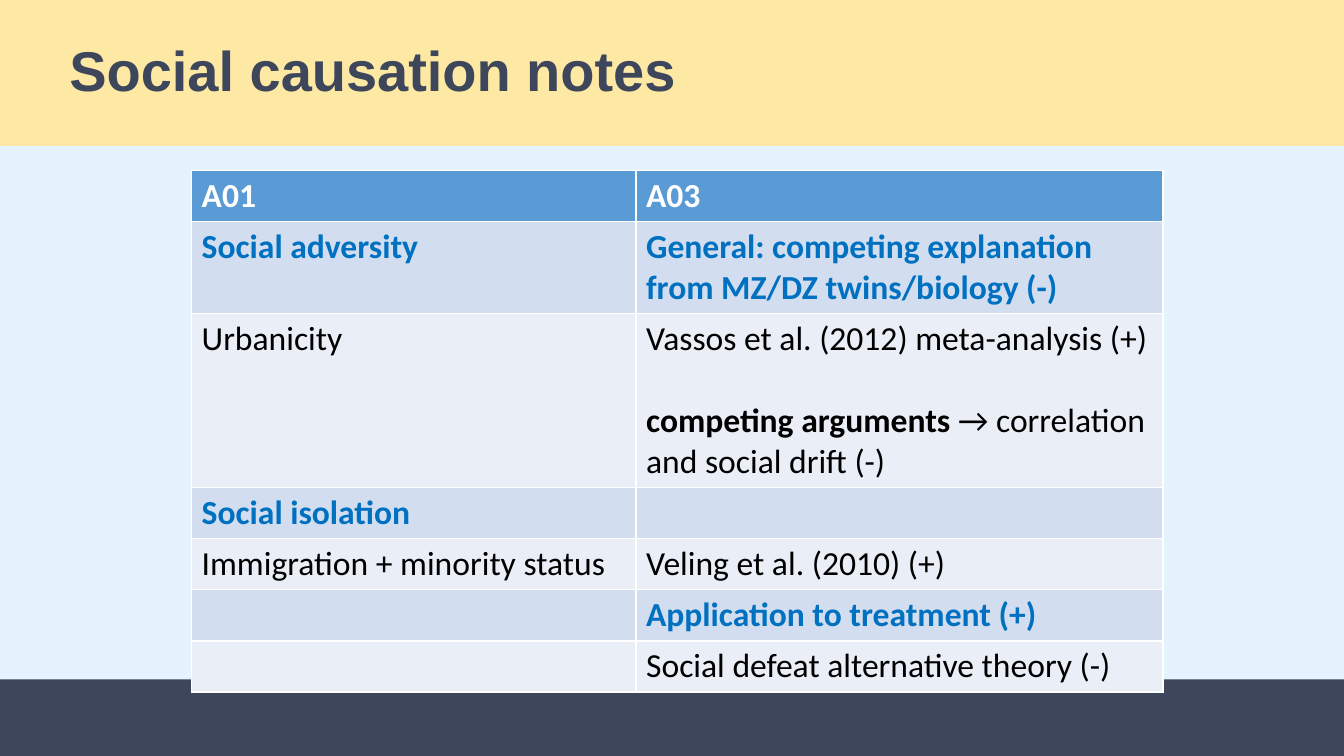
from dataclasses import dataclass

import pptx
import pptx.dml.color
import pptx.enum.shapes
import pptx.enum.text
import pptx.util
from pptx.dml.color import RGBColor
from pptx.util import Cm, Pt

NAVY = RGBColor(0x3D, 0x46, 0x5A)
CREAM = RGBColor(0xFE, 0xE9, 0xA4)
PALE_BLUE = RGBColor(0xE5, 0xF3, 0xFF)
HEADER_BLUE = RGBColor(0x5B, 0x9B, 0xD5)
BANDS = (RGBColor(0xD2, 0xDE, 0xEF), RGBColor(0xEA, 0xEF, 0xF7))
TOPIC_BLUE = RGBColor(0x00, 0x70, 0xC0)
WHITE = RGBColor(0xFF, 0xFF, 0xFF)
BLACK = RGBColor(0x00, 0x00, 0x00)

SLIDE_WIDTH = Cm(33.87)
SLIDE_HEIGHT = Cm(19.05)
COLUMN_WIDTHS = (11.2, 13.28)


@dataclass(frozen=True)
class Note:
    text: str
    bold_lead: str = ""
    space_before: float = 0


@dataclass(frozen=True)
class NoteRow:
    height: float
    a01: tuple[Note, ...]
    a03: tuple[Note, ...]
    color: RGBColor = BLACK
    bold: bool = False


NOTE_ROWS = (
    NoteRow(1.2, (Note("A01"),), (Note("A03"),), WHITE, True),
    NoteRow(2.08, (Note("Social adversity"),),
            (Note("General: competing explanation from MZ/DZ twins/biology (-)"),),
            TOPIC_BLUE, True),
    NoteRow(3.86, (Note("Urbanicity"),),
            (Note("Vassos et al. (2012) meta-analysis (+)"),
             Note("→ correlation and social drift (-)", "competing arguments ", 29.3))),
    NoteRow(1.2, (Note("Social isolation"),), (), TOPIC_BLUE, True),
    NoteRow(1.2, (Note("Immigration + minority status"),),
            (Note("Veling et al. (2010) (+)"),)),
    NoteRow(1.2, (), (Note("Application to treatment (+)"),), TOPIC_BLUE, True),
    NoteRow(1.2, (), (Note("Social defeat alternative theory (-)"),)),
)


def add_band(slide: pptx.slide.Slide, top: float, height: float,
             color: RGBColor) -> pptx.shapes.autoshape.Shape:
    band = slide.shapes.add_shape(
        pptx.enum.shapes.MSO_SHAPE.RECTANGLE, 0, Cm(top), SLIDE_WIDTH, Cm(height))
    band.shadow.inherit = False
    band.fill.solid()
    band.fill.fore_color.rgb = color
    band.line.fill.background()
    return band


def add_title(slide: pptx.slide.Slide, text: str) -> None:
    frame = add_band(slide, 0, 3.68, CREAM).text_frame
    frame.word_wrap = True
    frame.margin_left = Cm(1.75)
    frame.vertical_anchor = pptx.enum.text.MSO_ANCHOR.MIDDLE
    title = frame.paragraphs[0]
    title.text = text
    title.alignment = pptx.enum.text.PP_ALIGN.LEFT
    title.line_spacing = 0.9
    title.font.name = "Arial"
    title.font.size = Pt(40)
    title.font.bold = True
    title.font.color.rgb = NAVY


def fill_cell(cell: pptx.table._Cell, notes: tuple[Note, ...],
              row: NoteRow, background: RGBColor) -> None:
    cell.fill.solid()
    cell.fill.fore_color.rgb = background
    frame = cell.text_frame
    frame.paragraphs[0].font.size = Pt(24)
    for index, note in enumerate(notes):
        paragraph = frame.add_paragraph() if index else frame.paragraphs[0]
        if note.space_before:
            paragraph.space_before = Pt(note.space_before)
        paragraph.font.name = "Calibri"
        paragraph.font.size = Pt(24)
        paragraph.font.color.rgb = row.color
        if note.bold_lead:
            for text, bold in ((note.bold_lead, True), (note.text, False)):
                run = paragraph.add_run()
                run.text = text
                run.font.bold = bold
        else:
            paragraph.add_run().text = note.text
            paragraph.font.bold = row.bold


def add_notes_table(slide: pptx.slide.Slide) -> None:
    table = slide.shapes.add_table(
        len(NOTE_ROWS), len(COLUMN_WIDTHS), Cm(4.83), Cm(4.29),
        Cm(sum(COLUMN_WIDTHS)), Cm(sum(row.height for row in NOTE_ROWS))).table
    for column, width in zip(table.columns, COLUMN_WIDTHS):
        column.width = Cm(width)
    for index, row in enumerate(NOTE_ROWS):
        table.rows[index].height = Cm(row.height)
        background = BANDS[(index - 1) % 2] if index else HEADER_BLUE
        for column_index, notes in enumerate((row.a01, row.a03)):
            fill_cell(table.cell(index, column_index), notes, row, background)


def main() -> None:
    presentation = pptx.Presentation()
    presentation.slide_width = SLIDE_WIDTH
    presentation.slide_height = SLIDE_HEIGHT
    slide = presentation.slides.add_slide(presentation.slide_layouts[6])
    slide.background.fill.solid()
    slide.background.fill.fore_color.rgb = PALE_BLUE
    add_band(slide, 17.12, 1.93, NAVY)
    add_title(slide, "Social causation notes")
    add_notes_table(slide)
    presentation.save("out.pptx")


if __name__ == "__main__":
    main()
